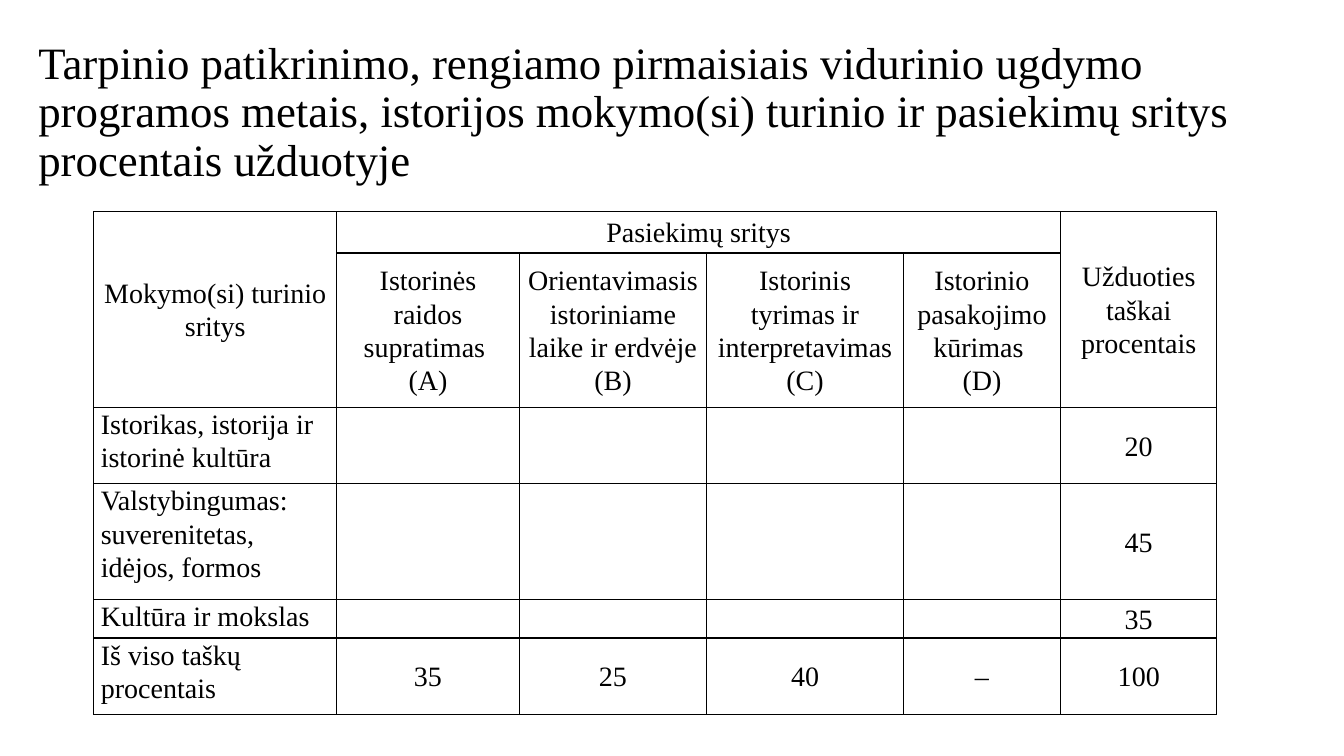
from dataclasses import dataclass

from lxml.etree import SubElement
from pptx import Presentation
from pptx.dml.color import RGBColor
from pptx.enum.text import MSO_ANCHOR, MSO_AUTO_SIZE, PP_ALIGN
from pptx.oxml.ns import qn
from pptx.util import Inches, Pt


@dataclass(frozen=True)
class Theme:
    font: str = "Times New Roman"
    ink: str = "000000"
    paper: str = "FFFFFF"
    title_size: int = 32
    table_size: int = 20
    border: int = 1


theme = Theme()


def write(frame, text, size=theme.table_size, align=PP_ALIGN.LEFT, spacing=1.07):
    frame.word_wrap = True
    for index, line in enumerate(text.split("\n")):
        para = frame.paragraphs[0] if index == 0 else frame.add_paragraph()
        para.alignment = align
        para.line_spacing = spacing
        span = para.add_run()
        span.text = line
        span.font.name = theme.font
        span.font.size = Pt(size)
        span.font.bold = False
        span.font.color.rgb = RGBColor.from_string(theme.ink)


def draw_borders(cell):
    properties = cell._tc.get_or_add_tcPr()
    for side in ("a:lnL", "a:lnR", "a:lnT", "a:lnB"):
        line = SubElement(properties, qn(side), w=str(Pt(theme.border)))
        fill = SubElement(line, qn("a:solidFill"))
        SubElement(fill, qn("a:srgbClr"), val=theme.ink)


deck = Presentation()
deck.slide_width = Inches(13.33)
deck.slide_height = Inches(7.5)
page = deck.slides.add_slide(deck.slide_layouts[5])
page.background.fill.solid()
page.background.fill.fore_color.rgb = RGBColor.from_string(theme.paper)

title = page.shapes.title
title.left, title.top = Inches(0.28), Inches(0.4)
title.width, title.height = Inches(12.73), Inches(1.45)
title.text_frame.auto_size = MSO_AUTO_SIZE.NONE
title.text_frame.vertical_anchor = MSO_ANCHOR.MIDDLE
write(
    title.text_frame,
    "Tarpinio patikrinimo, rengiamo pirmaisiais vidurinio ugdymo programos metais, "
    "istorijos mokymo(si) turinio ir pasiekimų sritys procentais užduotyje",
    size=theme.title_size,
    spacing=0.9,
)

column_widths = [2.41, 1.81, 1.86, 1.95, 1.56, 1.55]
row_heights = [0.41, 1.53, 0.76, 1.15, 0.38, 0.76]
header_rows = 2
rows = [
    ["Mokymo(si) turinio sritys", "Pasiekimų sritys", "", "", "", "Užduoties taškai procentais"],
    [
        "",
        "Istorinės raidos supratimas \n(A)",
        "Orientavimasis istoriniame laike ir erdvėje (B)",
        "Istorinis tyrimas ir interpretavimas (C)",
        "Istorinio pasakojimo kūrimas \n(D)",
        "",
    ],
    ["Istorikas, istorija ir istorinė kultūra", "", "", "", "", "20"],
    ["Valstybingumas: suverenitetas, idėjos, formos", "", "", "", "", "45"],
    ["Kultūra ir mokslas", "", "", "", "", "35"],
    ["Iš viso taškų procentais", "35", "25", "40", "–", "100"],
]

table = page.shapes.add_table(
    len(row_heights), len(column_widths),
    Inches(0.93), Inches(2.1), Inches(sum(column_widths)), Inches(sum(row_heights)),
).table
table.first_row = False
table.horz_banding = False
for column, width in zip(table.columns, column_widths):
    column.width = Inches(width)
for row, height in zip(table.rows, row_heights):
    row.height = Inches(height)

for row_index, texts in enumerate(rows):
    for column_index, text in enumerate(texts):
        cell = table.cell(row_index, column_index)
        is_area_name = column_index == 0 and row_index >= header_rows
        cell.margin_left = cell.margin_right = Inches(0.07)
        cell.margin_top = cell.margin_bottom = 0
        cell.vertical_anchor = MSO_ANCHOR.TOP if is_area_name else MSO_ANCHOR.MIDDLE
        draw_borders(cell)
        cell.fill.background()
        if text:
            write(cell.text_frame, text, align=PP_ALIGN.LEFT if is_area_name else PP_ALIGN.CENTER)

for first, last in [((0, 0), (1, 0)), ((0, 1), (0, 4)), ((0, 5), (1, 5))]:
    table.cell(*first).merge(table.cell(*last))

deck.save("out.pptx")
